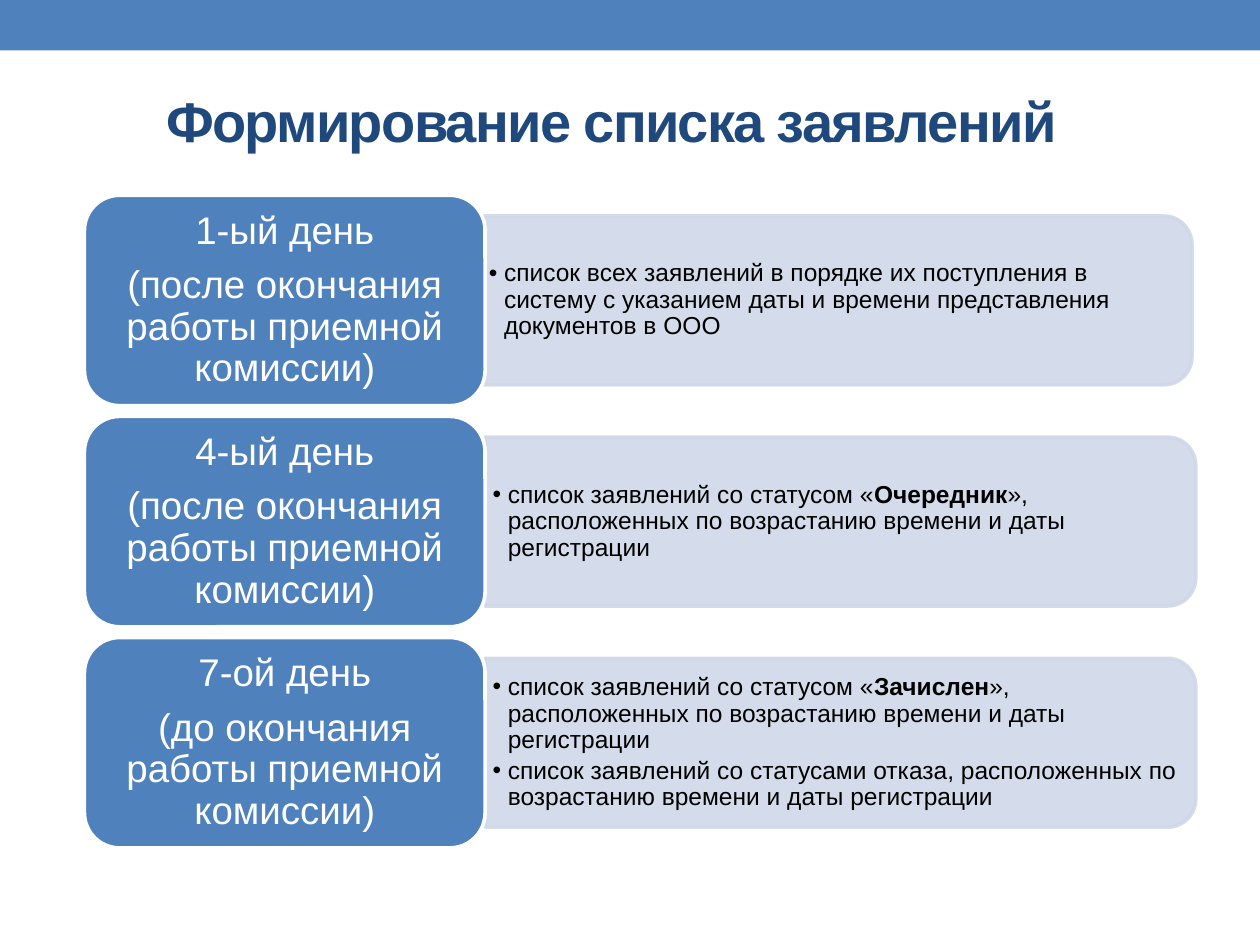
from lxml import etree
from pptx import Presentation
from pptx import util as u
from pptx.dml.color import RGBColor
from pptx.enum import shapes, text
from pptx.oxml.ns import qn

BLUE = RGBColor(0x4F, 0x81, 0xBD)
NAVY = RGBColor(0x1F, 0x49, 0x7D)
PALE = RGBColor(0xD0, 0xD8, 0xE8)
WHITE = RGBColor(0xFF, 0xFF, 0xFF)
BLACK = RGBColor(0x00, 0x00, 0x00)

COLUMNS, ROWS = 100, 75
FIRST_ROW, ROW_STEP = 15.5, 17.55
CARD_LEFT, CARD_WIDTH, CARD_HEIGHT = 6.7, 31.8, 16.7
PANEL_WIDTH, PANEL_HEIGHT = 56.4, 13.4

AFTER_CLOSE = [("(после окончания работы приемной комиссии)", False)]
BY_DATE = ("», расположенных по возрастанию времени и даты регистрации", False)
STATUS = ("список заявлений со статусом «", False)
DAYS = [
    ("1-ый день", AFTER_CLOSE, 38.2, [
        [("список всех заявлений в порядке их поступления в систему "
          "с указанием даты и времени представления документов в ООО", False)],
    ]),
    ("4-ый день", AFTER_CLOSE, 38.5, [
        [STATUS, ("Очередник", True), BY_DATE],
    ]),
    ("7-ой день", [("(до окончания работы приемной комиссии)", False)], 38.5, [
        [STATUS, ("Зачислен", True), BY_DATE],
        [("список заявлений со статусами отказа, расположенных "
          "по возрастанию времени и даты регистрации", False)],
    ]),
]


class SlideBuilder:
    font = "Arial"
    outline = u.Pt(2.08)

    def __init__(self, deck):
        self.page = deck.slides.add_slide(deck.slide_layouts[6])
        self.column = deck.slide_width / COLUMNS
        self.row = deck.slide_height / ROWS

    def frame(self, left, top, width, height):
        return (round(left * self.column), round(top * self.row),
                round(width * self.column), round(height * self.row))

    def block(self, kind, area, fill, line=None, opacity=100):
        box = self.page.shapes.add_shape(kind, *self.frame(*area))
        box.shadow.inherit = False
        box.fill.solid()
        box.fill.fore_color.rgb = fill
        if line is None:
            box.line.fill.background()
        else:
            box.line.color.rgb = line
            box.line.width = self.outline
        if opacity < 100:
            for color in box._element.spPr.iter(qn("a:srgbClr")):
                etree.SubElement(color, qn("a:alpha"), val=str(opacity * 1000))
        return box

    def panel(self, left, top, width, height):
        shift = (width - height) / 2
        area = (left + shift, top - shift, height, width)
        box = self.block(shapes.MSO_SHAPE.ROUND_2_SAME_RECTANGLE, area, PALE, PALE, 90)
        box.rotation = 90

    def words(self, area, paragraphs, size, color, margins=(0.1, 0.05), bold=False,
              spacing=0, bullet=False, **layout):
        box = self.page.shapes.add_textbox(*self.frame(*area))
        side, edge = (u.Inches(margin) for margin in margins)
        frame_format = {
            "word_wrap": True, "vertical_anchor": text.MSO_ANCHOR.MIDDLE,
            "margin_left": side, "margin_right": side,
            "margin_top": edge, "margin_bottom": edge,
        }
        for name, value in frame_format.items():
            setattr(box.text_frame, name, value)
        for index, spans in enumerate(paragraphs):
            para = box.text_frame.paragraphs[0] if index == 0 else box.text_frame.add_paragraph()
            for name, value in layout.items():
                setattr(para, name, value)
            if bullet:
                self.bullet(para)
            for content, strong in spans:
                span = para.add_run()
                span.text = content
                span_format = {"name": self.font, "size": u.Pt(size), "bold": bold or strong}
                for name, value in span_format.items():
                    setattr(span.font, name, value)
                span.font.color.rgb = color
                if spacing:
                    span._r.get_or_add_rPr().set("spc", str(spacing * 100))

    def bullet(self, para):
        properties = para._p.get_or_add_pPr()
        indent = u.Inches(0.12)
        properties.set("marL", str(indent))
        properties.set("indent", str(-indent))
        etree.SubElement(properties, qn("a:buFont"), typeface=self.font)
        etree.SubElement(properties, qn("a:buChar"), char="•")

    def day(self, top, name, note, panel_left, items):
        middle = top + CARD_HEIGHT / 2
        self.panel(panel_left, middle - PANEL_HEIGHT / 2, PANEL_WIDTH, PANEL_HEIGHT)
        self.words((panel_left, middle - 6.05, PANEL_WIDTH - 0.6, 12.1), items, 14, BLACK,
                   margins=(0.06, 0.03), bullet=True,
                   line_spacing=0.9, space_after=u.Pt(2.5))
        self.block(shapes.MSO_SHAPE.ROUNDED_RECTANGLE,
                   (CARD_LEFT, top, CARD_WIDTH, CARD_HEIGHT), BLUE, WHITE)
        self.words((CARD_LEFT + 0.8, top + 0.8, CARD_WIDTH - 1.6, CARD_HEIGHT - 1.6),
                   [[(name, False)], note], 22, WHITE, margins=(0.09, 0.05),
                   alignment=text.PP_ALIGN.CENTER, line_spacing=0.9, space_after=u.Pt(7.5))


def main():
    deck = Presentation()
    deck.slide_width, deck.slide_height = u.Inches(10), u.Inches(7.5)
    builder = SlideBuilder(deck)
    builder.block(shapes.MSO_SHAPE.RECTANGLE, (0, 0, COLUMNS, 4), BLUE)
    builder.words((12.2, 5.2, 78, 8.7), [[("Формирование списка заявлений", True)]],
                  32, NAVY, spacing=-1)
    for index, day in enumerate(DAYS):
        builder.day(FIRST_ROW + index * ROW_STEP, *day)
    deck.save("out.pptx")


if __name__ == "__main__":
    main()
